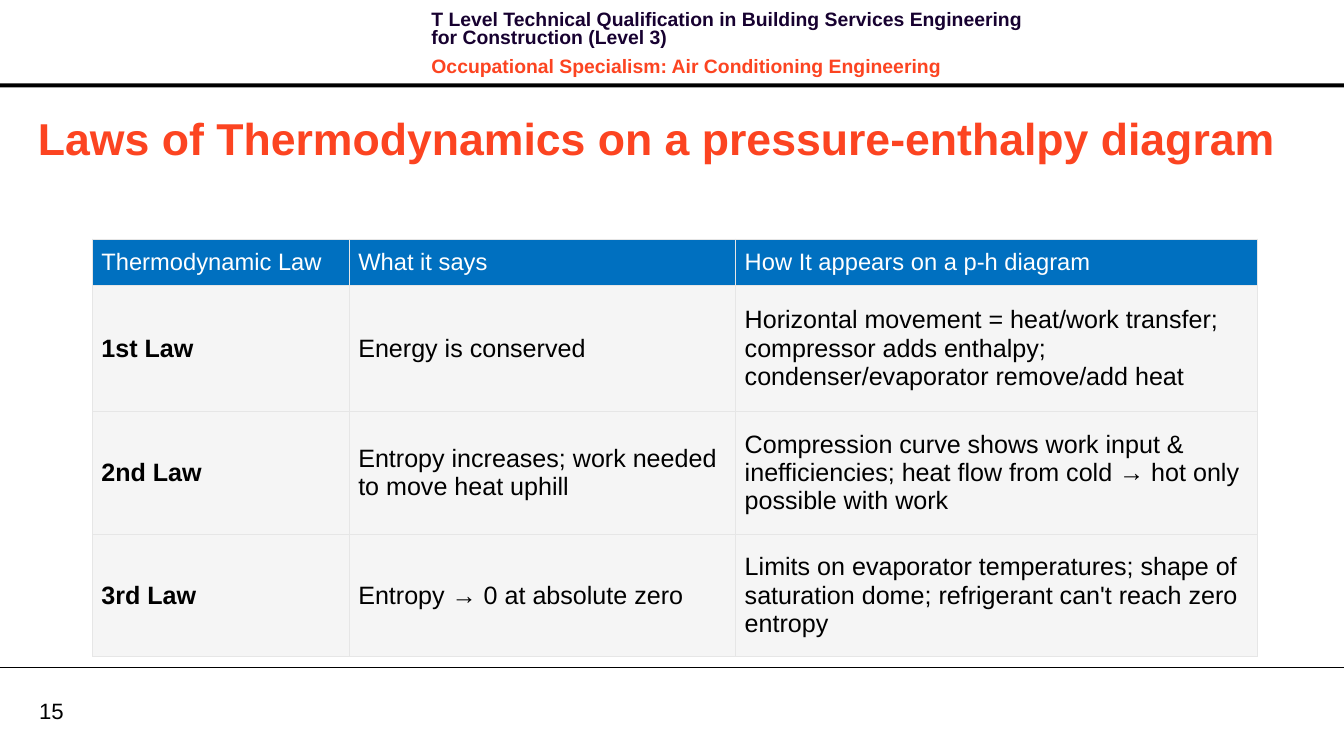
from dataclasses import dataclass

from lxml import etree
from pptx import Presentation
from pptx import util as u
from pptx.dml import color
from pptx.enum import shapes, text
from pptx.oxml import ns


@dataclass(frozen=True)
class Theme:
    font: str = "Arial"
    black: str = "000000"
    white: str = "FFFFFF"
    navy: str = "170130"
    red: str = "FC4421"
    blue: str = "0070C0"
    pale: str = "F5F5F5"
    edge: str = "E6E6E6"
    title: float = 32
    strap: float = 13.9
    page: float = 15.9
    head: float = 17
    body: float = 18


@dataclass(frozen=True)
class Box:
    left: float
    top: float
    width: float
    height: float

    def place(self) -> tuple:
        return tuple(u.Inches(n) for n in (self.left, self.top, self.width, self.height))


@dataclass(frozen=True)
class Law:
    name: str
    claim: str
    chart: str


THEME = Theme()
WIDTH, HEIGHT = 13.39, 7.48
COLS = (2.56, 3.85, 5.2)
ROWS = (0.46, 1.26, 1.22, 1.22)
LAWS = (
    Law("Thermodynamic Law", "What it says", "How It appears on a p‑h diagram"),
    Law("1st Law", "Energy is conserved",
        "Horizontal movement = heat/work transfer; compressor adds enthalpy; "
        "condenser/evaporator remove/add heat"),
    Law("2nd Law", "Entropy increases; work needed to move heat uphill",
        "Compression curve shows work input & inefficiencies; "
        "heat flow from cold → hot only possible with work"),
    Law("3rd Law", "Entropy → 0 at absolute zero",
        "Limits on evaporator temperatures; shape of saturation dome; "
        "refrigerant can't reach zero entropy"),
)


def rgb(code: str) -> color.RGBColor:
    return color.RGBColor.from_string(code)


def write(para, words: str, *, size: float, ink: str = THEME.black, bold: bool = False,
          lead: float | None = None, before: float = 0, after: float = 0) -> None:
    para.space_before, para.space_after = u.Pt(before), u.Pt(after)
    if lead:
        para.line_spacing = u.Pt(lead)
    run = para.add_run()
    run.text = words
    run.font.name, run.font.size = THEME.font, u.Pt(size)
    run.font.bold, run.font.color.rgb = bold, rgb(ink)


def frame(slide, box: Box, pad: tuple[float, float] = (0.1, 0.05)):
    area = slide.shapes.add_textbox(*box.place()).text_frame
    area.word_wrap = True
    area.margin_left = area.margin_right = u.Inches(pad[0])
    area.margin_top = area.margin_bottom = u.Inches(pad[1])
    return area


def rule_off(slide) -> None:
    bar = slide.shapes.add_shape(shapes.MSO_SHAPE.RECTANGLE, *Box(0, 0.83, WIDTH, 0.04).place())
    bar.shadow.inherit = False
    bar.fill.solid()
    bar.fill.fore_color.rgb = rgb(THEME.black)
    bar.line.fill.background()
    left, right, level = u.Inches(0), u.Inches(WIDTH), u.Inches(6.65)
    line = slide.shapes.add_connector(shapes.MSO_CONNECTOR.STRAIGHT, left, level, right, level)
    line.line.color.rgb = rgb(THEME.black)
    line.line.width = u.Pt(0.75)
    etree.SubElement(line._element.spPr, ns.qn("a:effectLst"))


def edge(cell) -> None:
    props = cell._tc.get_or_add_tcPr()
    for spot, side in enumerate(("lnL", "lnR", "lnT", "lnB")):
        line = etree.Element(ns.qn(f"a:{side}"), w=str(u.Pt(0.5)))
        fill = etree.SubElement(line, ns.qn("a:solidFill"))
        etree.SubElement(fill, ns.qn("a:srgbClr"), val=THEME.edge)
        props.insert(spot, line)


def fill_grid(slide) -> None:
    box = Box(0.92, 2.38, sum(COLS), sum(ROWS))
    grid = slide.shapes.add_table(len(ROWS), len(COLS), *box.place()).table
    for col, width in zip(grid.columns, COLS):
        col.width = u.Inches(width)
    for row, height in zip(grid.rows, ROWS):
        row.height = u.Inches(height)
    for r, law in enumerate(LAWS):
        top = r == 0
        for c, words in enumerate((law.name, law.claim, law.chart)):
            cell = grid.cell(r, c)
            cell.margin_left = cell.margin_right = u.Inches(0.09)
            cell.margin_top = cell.margin_bottom = u.Inches(0.05)
            cell.vertical_anchor = text.MSO_ANCHOR.MIDDLE
            cell.fill.solid()
            cell.fill.fore_color.rgb = rgb(THEME.blue if top else THEME.pale)
            edge(cell)
            write(cell.text_frame.paragraphs[0], words,
                  size=THEME.head if top else THEME.body,
                  ink=THEME.white if top else THEME.black, bold=c == 0 and not top)


def main() -> None:
    deck = Presentation()
    deck.slide_width, deck.slide_height = u.Inches(WIDTH), u.Inches(HEIGHT)
    slide = deck.slides.add_slide(deck.slide_layouts[6])
    rule_off(slide)

    strap = frame(slide, Box(4.2, 0.07, 6.33, 0.64))
    write(strap.paragraphs[0],
          "T Level Technical Qualification in Building Services Engineering "
          "for Construction (Level 3)",
          size=THEME.strap, ink=THEME.navy, bold=True, lead=13, after=4)
    write(strap.add_paragraph(), "Occupational Specialism: Air Conditioning Engineering",
          size=THEME.strap, ink=THEME.red, bold=True, lead=13, before=4, after=4)

    page = frame(slide, Box(0.39, 6.94, 0.64, 0.27), pad=(0, 0))
    page.vertical_anchor = text.MSO_ANCHOR.MIDDLE
    write(page.paragraphs[0], "15", size=THEME.page)

    title = frame(slide, Box(0.28, 1.06, 12.87, 0.64))
    write(title.paragraphs[0], "Laws of Thermodynamics on a pressure-enthalpy diagram",
          size=THEME.title, ink=THEME.red, bold=True)

    fill_grid(slide)
    deck.save("out.pptx")


if __name__ == "__main__":
    main()
